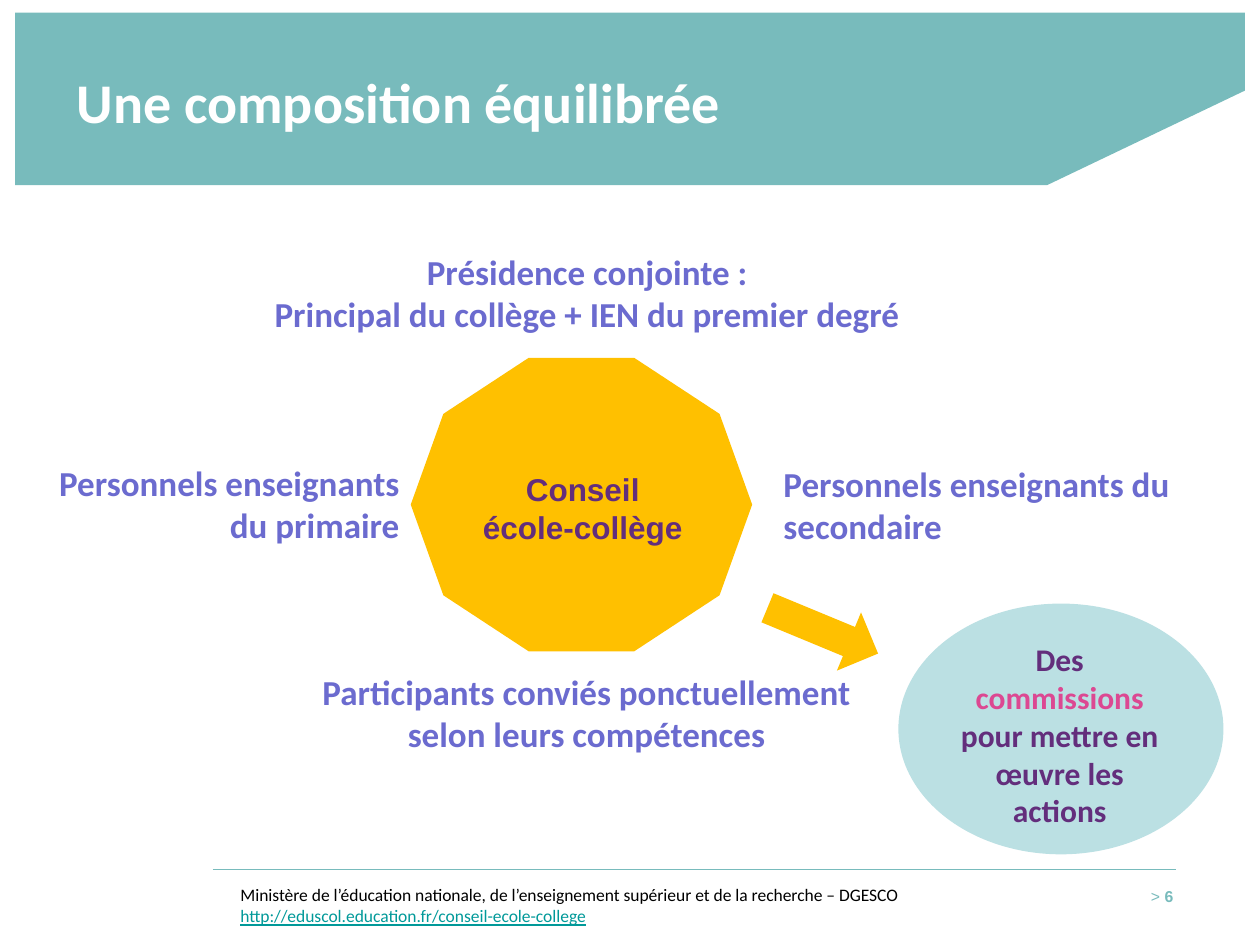
from dataclasses import dataclass

from lxml import etree
from pptx import Presentation
from pptx.dml.color import RGBColor
from pptx.enum.shapes import MSO_CONNECTOR, MSO_SHAPE
from pptx.enum.text import MSO_ANCHOR, PP_ALIGN
from pptx.oxml.ns import qn
from pptx.util import Inches, Pt

LEFT, MID, RIGHT = PP_ALIGN.LEFT, PP_ALIGN.CENTER, PP_ALIGN.RIGHT
TOP, CENTRE = MSO_ANCHOR.TOP, MSO_ANCHOR.MIDDLE
DECAGON, OVAL, ARROW = MSO_SHAPE.DECAGON, MSO_SHAPE.OVAL, MSO_SHAPE.DOWN_ARROW
STRAIGHT = MSO_CONNECTOR.STRAIGHT

WIDTH, HEIGHT = Inches(10), Inches(7.5)
COLS, ROWS = 100, 75


@dataclass(frozen=True)
class Theme:
    head: str = "Calibri"
    body: str = "Arial"
    teal: str = "78BBBC"
    pale: str = "BBE0E3"
    gold: str = "FFC000"
    blue: str = "6B6BCF"
    plum: str = "632E7C"
    pink: str = "DC4892"
    link: str = "009999"
    white: str = "FFFFFF"
    black: str = "000000"
    title: int = 32
    label: int = 20
    core: int = 18
    foot: int = 10
    page: int = 9


THEME = Theme()


def grid(col, row):
    """Turn columns and rows into slide lengths."""
    return round(WIDTH * col / COLS), round(HEIGHT * row / ROWS)


def place(box):
    """Turn (column, row, columns, rows) into left, top, width, height."""
    return *grid(*box[:2]), *grid(*box[2:])


def paint(shape, color):
    shape.shadow.inherit = False
    shape.fill.solid()
    shape.fill.fore_color.rgb = RGBColor.from_string(color)
    shape.line.fill.background()


def style(run, size, color, face=THEME.head, bold=True):
    font = run.font
    font.name, font.size, font.bold = face, Pt(size), bold
    font.color.rgb = RGBColor.from_string(color)


def add_text(slide, box, text, size, color, face=THEME.head, bold=True,
             align=LEFT, anchor=TOP):
    frame = slide.shapes.add_textbox(*place(box)).text_frame
    frame.word_wrap = True
    frame.vertical_anchor = anchor
    frame.text = text
    for para in frame.paragraphs:
        para.alignment = align
        for run in para.runs:
            style(run, size, color, face, bold)
    return frame


def add_form(slide, kind, box, color, turn=0):
    shape = slide.shapes.add_shape(kind, *place(box))
    shape.rotation = turn
    paint(shape, color)
    return shape


def add_band(slide):
    points = [grid(*p) for p in ((98.8, 1), (1.2, 1), (1.2, 14.7),
                                 (83.1, 14.7), (98.8, 7.2))]
    path = slide.shapes.build_freeform(*points[0])
    path.add_line_segments(points[1:], close=True)
    paint(path.convert_to_shape(), THEME.teal)


def add_rule(slide, start, end):
    rule = slide.shapes.add_connector(STRAIGHT, *grid(*start), *grid(*end))
    rule.line.color.rgb = RGBColor.from_string(THEME.teal)
    rule.line.width = Pt(0.75)
    etree.SubElement(rule._element.spPr, qn("a:effectLst"))


def add_labels(slide):
    labels = (
        ((18.9, 19.4, 55.4, 7.7), MID,
         "Présidence conjointe :\nPrincipal du collège + IEN du premier degré"),
        ((2.4, 36.1, 30.3, 7.7), RIGHT, "Personnels enseignants du primaire"),
        ((61.2, 36.2, 33.6, 7.7), LEFT, "Personnels enseignants du secondaire"),
        ((22, 52.7, 49.1, 7.7), MID,
         "Participants conviés ponctuellement selon leurs compétences"),
    )
    for box, align, text in labels:
        add_text(slide, box, text, THEME.label, THEME.blue, align=align)


def add_council(slide):
    add_form(slide, DECAGON, (32.6, 28.4, 27.1, 23.3), THEME.gold)
    add_text(slide, (35.9, 36.8, 20.7, 7.1), "Conseil\nécole-collège",
             THEME.core, THEME.plum, THEME.body, align=MID)


def add_task(slide):
    add_form(slide, ARROW, (62.8, 45.3, 5, 9.5), THEME.gold, 292.5)
    oval = add_form(slide, OVAL, (71.3, 47.9, 25.8, 19.9), THEME.pale)
    frame = oval.text_frame
    frame.word_wrap = True
    frame.vertical_anchor = TOP
    frame.margin_left, frame.margin_right = Inches(0.08), Inches(0.1)
    frame.margin_top, frame.margin_bottom = 0, Inches(0.05)
    para = frame.paragraphs[0]
    para.alignment = MID
    for text, color in (("Des ", THEME.plum), ("commissions ", THEME.pink),
                        ("pour mettre en œuvre les actions", THEME.plum)):
        run = para.add_run()
        run.text = text
        style(run, THEME.core, color)


def add_footer(slide):
    add_rule(slide, (16.9, 69), (93.3, 69))
    page = add_text(slide, (83.9, 69.9, 10.2, 5), "> ", THEME.page, THEME.teal,
                    THEME.body, False, RIGHT)
    count = page.paragraphs[0].add_run()
    count.text = "6"
    style(count, THEME.page, THEME.teal, THEME.body)
    note = add_text(
        slide, (18.1, 69.7, 66.6, 3.2),
        "Ministère de l’éducation nationale, de l’enseignement supérieur "
        "et de la recherche – DGESCO\n"
        "http://eduscol.education.fr/conseil-ecole-college",
        THEME.foot, THEME.black, bold=False)
    link = note.paragraphs[1].runs[0]
    style(link, THEME.foot, THEME.link, bold=False)
    link.font.underline = True


def main():
    deck = Presentation()
    deck.slide_width, deck.slide_height = WIDTH, HEIGHT
    slide = deck.slides.add_slide(deck.slide_layouts[6])
    add_band(slide)
    add_text(slide, (5.1, 1.3, 89.9, 13.4), "Une composition équilibrée",
             THEME.title, THEME.white, anchor=CENTRE)
    add_labels(slide)
    add_council(slide)
    add_task(slide)
    add_footer(slide)
    deck.save("out.pptx")


if __name__ == "__main__":
    main()
